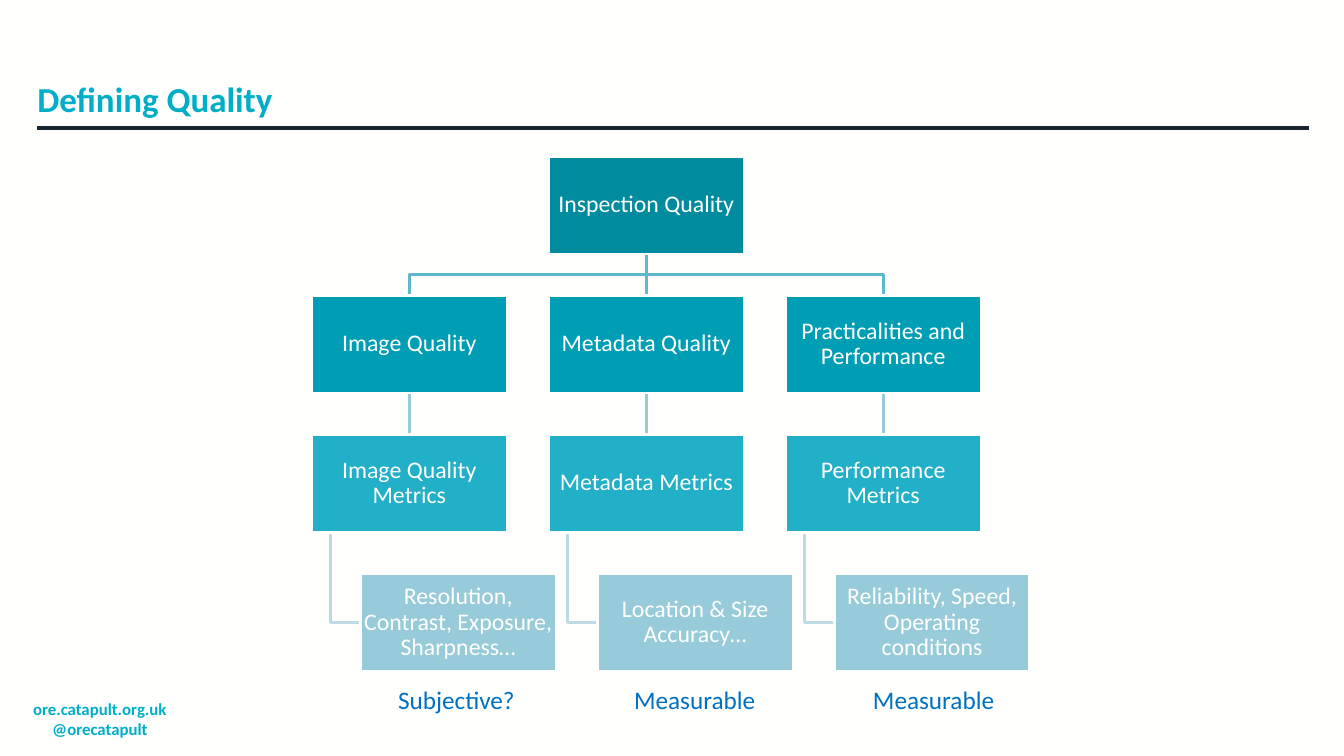
"""Build the Defining Quality slide with its hierarchy of inspection metrics."""
from lxml import etree
from pptx import Presentation
from pptx.dml.color import RGBColor
from pptx.enum.shapes import MSO_CONNECTOR, MSO_SHAPE
from pptx.enum.text import MSO_ANCHOR, MSO_AUTO_SIZE, PP_ALIGN
from pptx.oxml.ns import qn
from pptx.util import Inches, Pt

STRAIGHT = MSO_CONNECTOR.STRAIGHT
RECTANGLE = MSO_SHAPE.RECTANGLE
MIDDLE, BOTTOM = MSO_ANCHOR.MIDDLE, MSO_ANCHOR.BOTTOM
LEFT, CENTER = PP_ALIGN.LEFT, PP_ALIGN.CENTER
NO_AUTOFIT = MSO_AUTO_SIZE.NONE

WHITE = RGBColor(0xFF, 0xFF, 0xFE)
NAVY = RGBColor(0x18, 0x25, 0x2F)
TURQUOISE = RGBColor(0x00, 0xAE, 0xC7)
BLUE = RGBColor(0x00, 0x70, 0xC0)
LEVEL_FILLS = [
    RGBColor(0x00, 0x8B, 0x9F),
    RGBColor(0x00, 0x9E, 0xB5),
    RGBColor(0x22, 0xAF, 0xC8),
    RGBColor(0x97, 0xCB, 0xDA),
]
BRANCH_LINE = RGBColor(0x5E, 0xB8, 0xCE)
METRIC_LINE = RGBColor(0x97, 0xCB, 0xDA)
DETAIL_LINE = RGBColor(0xBD, 0xDB, 0xE5)

BOX_WIDTH, BOX_HEIGHT = 1.94, 0.97
TOP, ROW_STEP = 1.55, 1.38
FIRST_LEFT, COLUMN_STEP = 3.09, 2.35
DETAIL_INDENT, STEM_INDENT = 0.485, 0.19
ROOT_CENTER = FIRST_LEFT + COLUMN_STEP + BOX_WIDTH / 2

COLUMNS = [
    ("Image Quality", "Image Quality Metrics",
     "Resolution, Contrast, Exposure, Sharpness…"),
    ("Metadata Quality", "Metadata Metrics", "Location & Size Accuracy…"),
    ("Practicalities and Performance", "Performance Metrics",
     "Reliability, Speed, Operating conditions"),
]
VERDICTS = [("Subjective?", 3.85, 1.4), ("Measurable", 6.19, 1.42),
            ("Measurable", 8.56, 1.42)]


def write_text(text_frame, text, size, color, bold=False, align=LEFT):
    text_frame.text = text
    for paragraph in text_frame.paragraphs:
        paragraph.alignment = align
        for run in paragraph.runs:
            run.font.name = "Calibri"
            run.font.size = Pt(size)
            run.font.bold = bold
            run.font.color.rgb = color


def draw_line(points, color, width=2):
    corners = [(Inches(x), Inches(y)) for x, y in points]
    if len(corners) == 2:
        line_shape = slide.shapes.add_connector(STRAIGHT, *corners[0], *corners[1])
    else:
        builder = slide.shapes.build_freeform(*corners[0])
        builder.add_line_segments(corners[1:], close=False)
        line_shape = builder.convert_to_shape()
        line_shape.fill.background()
    line_shape.line.color.rgb = color
    line_shape.line.width = Pt(width)
    etree.SubElement(line_shape._element.spPr, qn("a:effectLst"))


presentation = Presentation()
presentation.slide_width = Inches(13.33)
presentation.slide_height = Inches(7.5)
slide = presentation.slides.add_slide(presentation.slide_layouts[5])
slide.background.fill.solid()
slide.background.fill.fore_color.rgb = WHITE

draw_line([(0.37, 1.27), (12.98, 1.27)], NAVY, 3)

footer = slide.shapes.add_textbox(Inches(0.23), Inches(6.88), Inches(2.13), Inches(0.5))
footer.text_frame.word_wrap = True
write_text(footer.text_frame, "ore.catapult.org.uk\n@orecatapult", 12, TURQUOISE, True)
handle_properties = footer.text_frame.paragraphs[1]._p.get_or_add_pPr()
handle_properties.set("marL", str(Inches(0.19)))

title = slide.shapes.title
title.left, title.top = Inches(0.37), Inches(0.3)
title.width, title.height = Inches(12.6), Inches(0.97)
title_frame = title.text_frame
title_frame.auto_size = NO_AUTOFIT
title_frame.vertical_anchor = BOTTOM
title_frame.margin_left, title_frame.margin_right = 0, Inches(0.2)
title_frame.margin_top, title_frame.margin_bottom = Inches(0.04), Inches(0.08)
write_text(title_frame, "Defining Quality", 25, TURQUOISE, True)

row_tops = [TOP + level * ROW_STEP for level in range(4)]
row_bottoms = [top + BOX_HEIGHT for top in row_tops]
boxes = [("Inspection Quality", 0, FIRST_LEFT + COLUMN_STEP)]

for column, labels in enumerate(COLUMNS):
    left = FIRST_LEFT + column * COLUMN_STEP
    center = left + BOX_WIDTH / 2
    stem = left + STEM_INDENT
    detail_left = left + DETAIL_INDENT
    detail_middle = row_tops[3] + BOX_HEIGHT / 2
    branch_points = [(ROOT_CENTER, row_bottoms[0]), (center, row_tops[1])]
    if column != 1:
        branch_middle = (row_bottoms[0] + row_tops[1]) / 2
        branch_points[1:1] = [(ROOT_CENTER, branch_middle), (center, branch_middle)]
    draw_line(branch_points, BRANCH_LINE)
    draw_line([(center, row_bottoms[1]), (center, row_tops[2])], METRIC_LINE)
    draw_line([(stem, row_bottoms[2]), (stem, detail_middle),
               (detail_left, detail_middle)], DETAIL_LINE)
    boxes += zip(labels, (1, 2, 3), (left, left, detail_left))

for label, level, left in boxes:
    box = slide.shapes.add_shape(RECTANGLE, Inches(left), Inches(row_tops[level]),
                                 Inches(BOX_WIDTH), Inches(BOX_HEIGHT))
    box.shadow.inherit = False
    box.fill.solid()
    box.fill.fore_color.rgb = LEVEL_FILLS[level]
    box.line.color.rgb = WHITE
    box.line.width = Pt(2)
    frame = box.text_frame
    frame.word_wrap = True
    frame.vertical_anchor = MIDDLE
    frame.margin_left = frame.margin_right = Inches(0.01)
    frame.margin_top = frame.margin_bottom = Inches(0.01)
    write_text(frame, label, 17, WHITE, align=CENTER)
    frame.paragraphs[0].line_spacing = 0.9

for verdict, left, width in VERDICTS:
    caption = slide.shapes.add_textbox(Inches(left), Inches(6.74),
                                       Inches(width), Inches(0.4))
    caption.text_frame.word_wrap = False
    write_text(caption.text_frame, verdict, 18, BLUE)

presentation.save("out.pptx")
